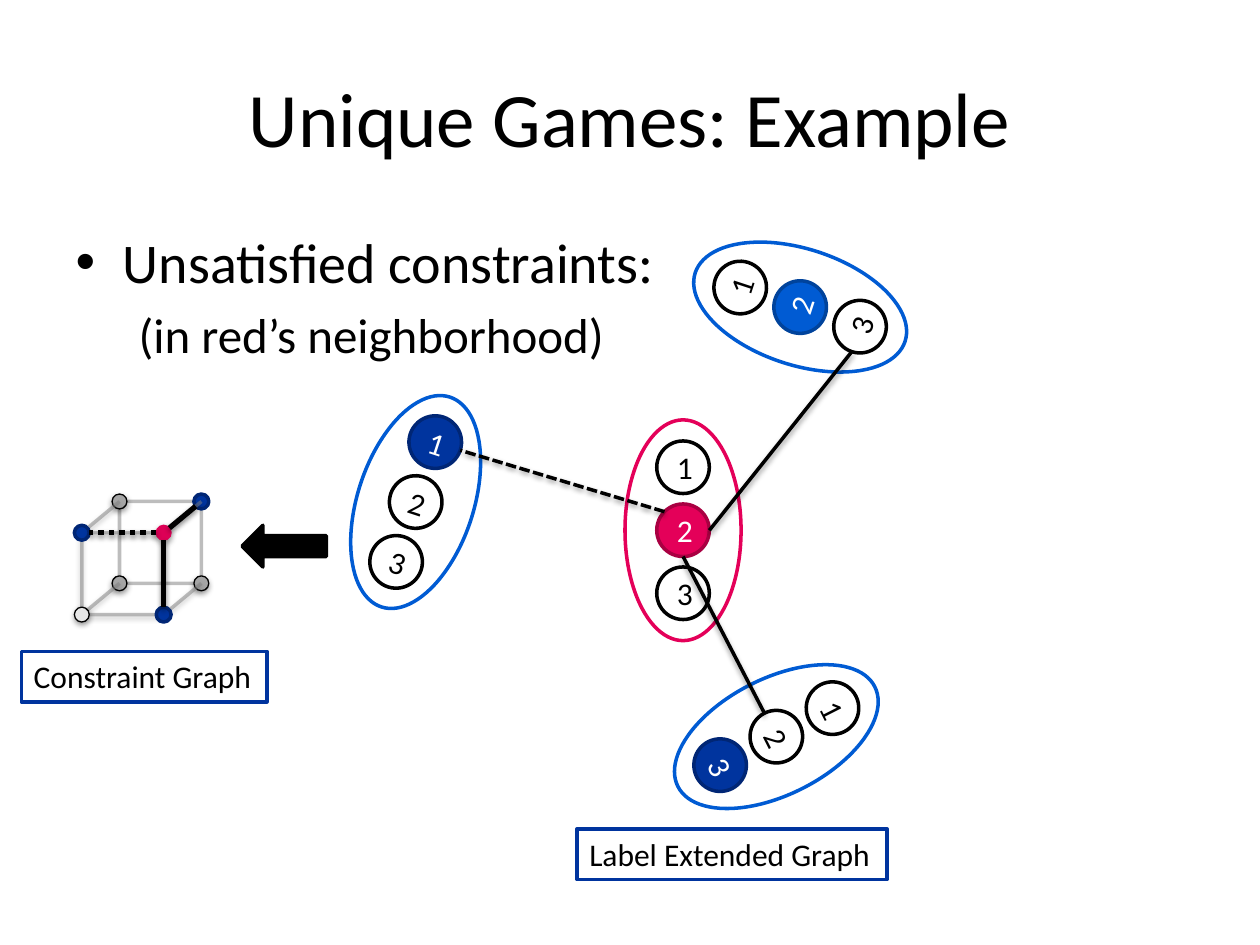
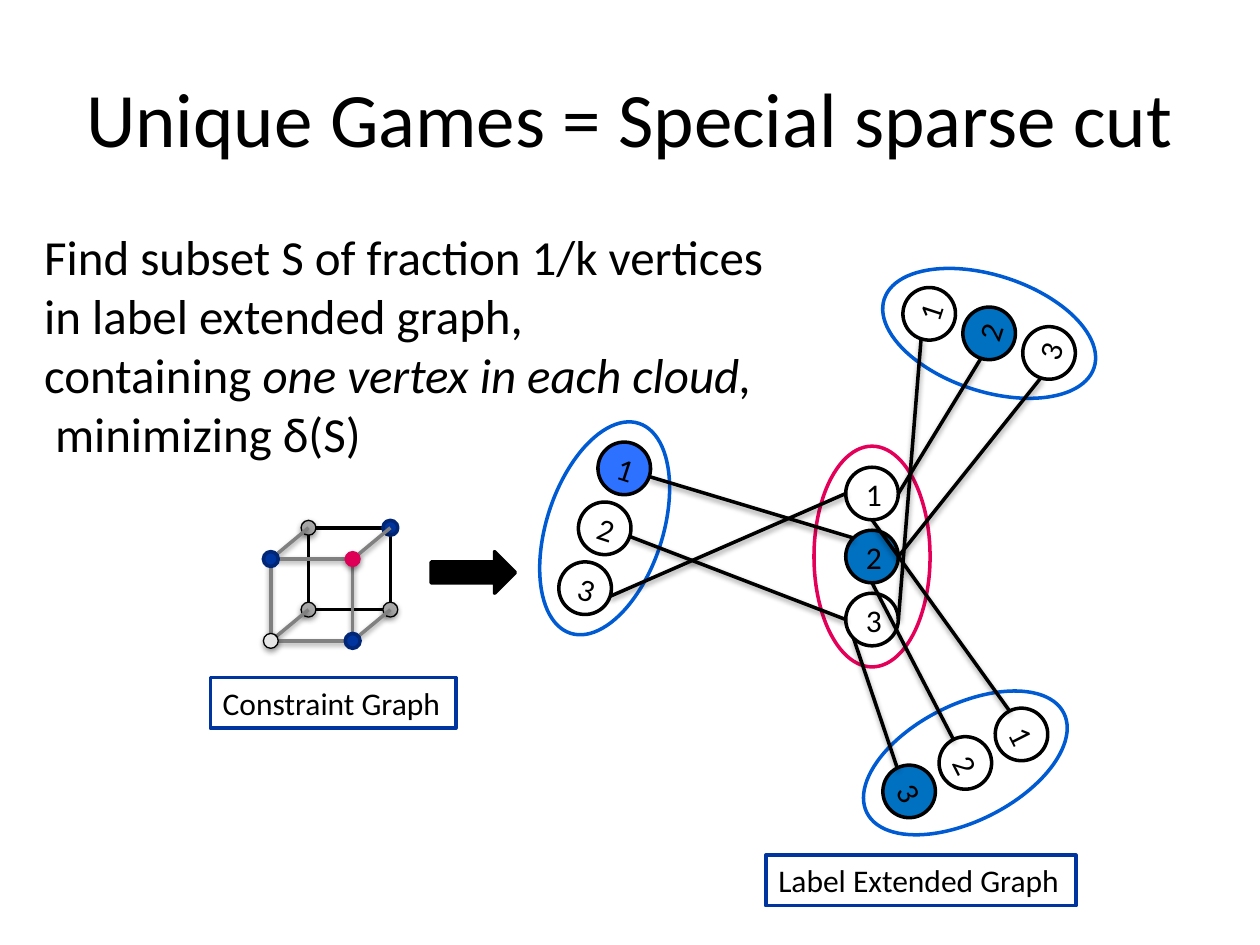
import math
from dataclasses import dataclass

import lxml.etree
import pptx
import pptx.dml.color
import pptx.enum.dml
import pptx.enum.shapes
import pptx.enum.text
import pptx.oxml
import pptx.oxml.ns
import pptx.util

Cm, Pt = pptx.util.Cm, pptx.util.Pt
Rgb = pptx.dml.color.RGBColor.from_string
qn = pptx.oxml.ns.qn
SHAPE = pptx.enum.shapes.MSO_SHAPE
DASH = pptx.enum.dml.MSO_LINE
ALIGN = pptx.enum.text.PP_ALIGN
ANCHOR = pptx.enum.text.MSO_ANCHOR
STRAIGHT = pptx.enum.shapes.MSO_CONNECTOR.STRAIGHT


@dataclass(frozen=True)
class Theme:
    font: str = "Calibri"
    black: str = "000000"
    white: str = "FFFFFF"
    grey: str = "808080"
    back_dot: str = "A6A6A6"
    pale_dot: str = "E6E6E6"
    navy: str = "00349E"
    navy_rim: str = "002675"
    blue: str = "005BD3"
    blue_rim: str = "00439C"
    red: str = "E40059"
    red_rim: str = "A90042"
    red_dot: str = "DD0056"
    cut_blue: str = "0070C0"
    bright_blue: str = "2C71FF"
    title: int = 44
    body: int = 32
    sub: int = 28
    label: int = 18


theme = Theme()


def finish(shape, line, width=2, fill=None, alpha=100, dash=None, shadow=False):
    """Set fill, outline and shadow of a shape or connector."""
    if fill:
        shape.fill.solid()
        shape.fill.fore_color.rgb = Rgb(fill)
    elif hasattr(shape, "fill"):
        shape.fill.background()
    shape.line.color.rgb = Rgb(line)
    for name, value in {"width": Pt(width), "dash_style": dash}.items():
        setattr(shape.line, name, value)
    properties = shape._element.spPr
    if alpha < 100:
        colour = properties.find(f"{qn('a:ln')}/{qn('a:solidFill')}/{qn('a:srgbClr')}")
        lxml.etree.SubElement(colour, qn("a:alpha"), val=str(alpha * 1000))
    effects = lxml.etree.SubElement(properties, qn("a:effectLst"))
    if shadow:
        effects.append(pptx.oxml.parse_xml(
            f'<a:outerShdw {pptx.oxml.ns.nsdecls("a")} blurRad="40000" dist="20000" '
            'dir="5400000" rotWithShape="0"><a:srgbClr val="000000">'
            '<a:alpha val="38000"/></a:srgbClr></a:outerShdw>'))


def write(paragraph, text, size, color=theme.black, italic=None):
    """Add a formatted run to a paragraph."""
    run = paragraph.add_run()
    run.text = text
    for name, value in {"name": theme.font, "size": Pt(size), "italic": italic}.items():
        setattr(run.font, name, value)
    run.font.color.rgb = Rgb(color)


# Geometry in centimetres
CLOUD_W, CLOUD_H = 2.34, 4.45
VERTEX, VERTEX_STEP = 1.06, 1.27
CUBE_SIDE, DOT = 1.65, 0.3
SITES = {"right": 0, "bottom": 90, "bottom left": 135, "left": 180, "top left": 225}

# Clouds: centre x, centre y, rotation, site that faces the red cloud
clouds = {
    "red": (13.77, 10.69, 0, None),
    "top": (16.13, 6.19, 288.1, "left"),
    "bottom": (15.65, 14.85, 63.1, "left"),
    "west": (8.38, 10.12, 18.1, "right"),
}

# Cube corners: x, y, fill, rim, rim width
front_x, front_y, back_x, back_y = 1.65, 10.74, 2.41, 10.11
navy_dot = (theme.navy, theme.navy_rim, 2)
back_dot = (theme.back_dot, theme.black, 0.75)
back_corners = {(0, 0): back_dot, (1, 0): navy_dot, (0, 1): back_dot, (1, 1): back_dot}
front_corners = {
    (0, 0): navy_dot,
    (1, 0): (theme.red_dot, theme.red_dot, 0.75),
    (0, 1): (theme.pale_dot, theme.black, 0.75),
    (1, 1): navy_dot,
}
red_corner = (front_x + CUBE_SIDE, front_y)
red_cube_edges = [
    ((front_x, front_y), DASH.ROUND_DOT),
    ((back_x + CUBE_SIDE, back_y), None),
    ((front_x + CUBE_SIDE, front_y + CUBE_SIDE), None),
]

captions = [("Label Extended Graph", 11.63, 16.71, 6.25),
            ("Constraint Graph", 0.43, 13.13, 4.95)]

# Chosen vertices: (cloud, label) -> fill, rim, text; edges: red label, site, cloud, label, dash
navy_choice = (theme.navy, theme.navy_rim, theme.white)
cut_choice = (theme.cut_blue, theme.black, theme.black)
plain = (theme.white, theme.black, theme.black)
games = [
    {
        "title": "Unique Games: Example", "layout": 1, "shift": (0, 0),
        "arrow": SHAPE.LEFT_ARROW, "back alpha": 25, "front alpha": 51,
        "cube edges": red_cube_edges,
        "chosen": {
            ("red", 2): (theme.red, theme.red_rim, theme.white),
            ("top", 2): (theme.blue, theme.blue_rim, theme.white),
            ("bottom", 3): navy_choice,
            ("west", 1): navy_choice,
        },
        "edges": [
            (2, "top left", "west", 1, DASH.SQUARE_DOT),
            (2, "right", "top", 3, None),
            (2, "bottom", "bottom", 2, None),
        ],
    },
    {
        "title": "Unique Games = Special sparse cut", "layout": 5, "shift": (3.81, 0.53),
        "arrow": SHAPE.RIGHT_ARROW, "back alpha": 100, "front alpha": 100,
        "cube edges": [],
        "chosen": {
            ("red", 2): cut_choice,
            ("top", 2): cut_choice,
            ("bottom", 3): cut_choice,
            ("west", 1): (theme.bright_blue, theme.black, theme.black),
        },
        "edges": [
            (2, "top left", "west", 1, None),
            (3, "left", "west", 2, None),
            (1, "left", "west", 3, None),
            (1, "right", "top", 2, None),
            (2, "right", "top", 3, None),
            (3, "right", "top", 1, None),
            (1, "bottom", "bottom", 1, None),
            (2, "bottom", "bottom", 2, None),
            (3, "bottom left", "bottom", 3, None),
        ],
    },
]

deck = pptx.Presentation()
deck.slide_width, deck.slide_height = Cm(25.4), Cm(19.05)

for game in games:
    slide = deck.slides.add_slide(deck.slide_layouts[game["layout"]])
    shapes = slide.shapes
    dx, dy = game["shift"]

    # Title
    title = shapes.title
    title.left, title.top, title.width, title.height = Cm(1.27), Cm(0.76), Cm(22.86), Cm(3.18)
    title.text_frame.vertical_anchor = ANCHOR.MIDDLE
    heading = title.text_frame.paragraphs[0]
    heading.alignment = ALIGN.CENTER
    write(heading, game["title"], theme.title)

    # List of the example
    if game["layout"] == 1:
        body = slide.placeholders[1]
        body.left, body.top, body.width, body.height = Cm(1.27), Cm(4.45), Cm(22.86), Cm(12.57)
        write(body.text_frame.paragraphs[0], "Unsatisfied constraints:", theme.body)
        remark = body.text_frame.add_paragraph()
        remark.level = 1
        lxml.etree.SubElement(remark._p.get_or_add_pPr(), qn("a:buNone"))
        write(remark, "(in red’s neighborhood)", theme.sub)

    # Constraint graph: back face, depth edges, front face
    for x, y, corners, colour, alpha in (
            (back_x, back_y, back_corners, theme.black, game["back alpha"]),
            (front_x, front_y, front_corners, theme.grey, game["front alpha"])):
        if corners is front_corners:
            for col, row in corners:
                depth = shapes.add_connector(
                    STRAIGHT,
                    Cm(front_x + col * CUBE_SIDE + dx), Cm(front_y + row * CUBE_SIDE + dy),
                    Cm(back_x + col * CUBE_SIDE + dx), Cm(back_y + row * CUBE_SIDE + dy))
                finish(depth, theme.grey, alpha=alpha, shadow=True)
        face = shapes.add_shape(SHAPE.RECTANGLE, Cm(x + dx), Cm(y + dy),
                                Cm(CUBE_SIDE), Cm(CUBE_SIDE))
        finish(face, colour, alpha=alpha, shadow=corners is front_corners)
        for (col, row), (fill, rim, width) in corners.items():
            dot = shapes.add_shape(
                SHAPE.OVAL, Cm(x + col * CUBE_SIDE - DOT / 2 + dx),
                Cm(y + row * CUBE_SIDE - DOT / 2 + dy), Cm(DOT), Cm(DOT))
            finish(dot, rim, width, fill, shadow=width < 1)

    # Clouds and their vertices
    centres = {}
    for cloud, (x, y, turn, _) in clouds.items():
        outline = shapes.add_shape(
            SHAPE.OVAL, Cm(x - CLOUD_W / 2 + dx), Cm(y - CLOUD_H / 2 + dy),
            Cm(CLOUD_W), Cm(CLOUD_H))
        outline.rotation = turn
        finish(outline, theme.red if cloud == "red" else theme.blue, fill=theme.white)
        for number in (1, 2, 3):
            reach = (number - 2) * VERTEX_STEP
            vx = x - reach * math.sin(math.radians(turn)) + dx
            vy = y + reach * math.cos(math.radians(turn)) + dy
            centres[cloud, number] = vx, vy
            fill, rim, ink = game["chosen"].get((cloud, number), plain)
            vertex = shapes.add_shape(SHAPE.OVAL, Cm(vx - VERTEX / 2), Cm(vy - VERTEX / 2),
                                      Cm(VERTEX), Cm(VERTEX))
            vertex.rotation = turn
            finish(vertex, rim, fill=fill)
            vertex.text_frame.vertical_anchor = ANCHOR.MIDDLE
            digit = vertex.text_frame.paragraphs[0]
            digit.alignment = ALIGN.CENTER
            write(digit, str(number), theme.label, ink)

    # Constraint edges, from rim to rim
    for red_number, red_site, cloud, number, dash in game["edges"]:
        ends = []
        for key, site in (("red", red_number), red_site), ((cloud, number), clouds[cloud][3]):
            angle = math.radians(SITES[site] + clouds[key[0]][2])
            vx, vy = centres[key]
            ends += [Cm(vx + VERTEX / 2 * math.cos(angle)), Cm(vy + VERTEX / 2 * math.sin(angle))]
        edge = shapes.add_connector(STRAIGHT, *ends)
        finish(edge, theme.black, dash=dash, shadow=True)

    # Captions and the arrow between the graphs
    for text, x, y, width in captions:
        caption = shapes.add_textbox(Cm(x + dx), Cm(y + dy), Cm(width), Cm(1.02))
        finish(caption, theme.navy, fill=theme.white)
        caption.text_frame.word_wrap = False
        write(caption.text_frame.paragraphs[0], text, theme.label)
    arrow = shapes.add_shape(game["arrow"], Cm(4.88 + dx), Cm(10.59 + dy), Cm(1.7), Cm(0.84))
    finish(arrow, theme.black, fill=theme.black)

    # Highlighted cube edges at the red corner
    for (x, y), dash in game["cube edges"]:
        start_x, start_y = red_corner
        length = math.hypot(x - start_x, y - start_y)
        trim_x, trim_y = (x - start_x) / length * DOT / 2, (y - start_y) / length * DOT / 2
        strong = shapes.add_connector(
            STRAIGHT, Cm(start_x + trim_x + dx), Cm(start_y + trim_y + dy),
            Cm(x - trim_x + dx), Cm(y - trim_y + dy))
        finish(strong, theme.black, 3, dash=dash, shadow=True)

    # Statement of the sparse cut problem
    if game["layout"] == 5:
        statement = shapes.add_textbox(Cm(0.64), Cm(4.45), Cm(15.65), Cm(5.05))
        frame = statement.text_frame
        frame.word_wrap = False
        write(frame.paragraphs[0], "Find subset S of fraction 1/k vertices", theme.sub)
        write(frame.add_paragraph(), "in label extended graph,", theme.sub)
        condition = frame.add_paragraph()
        write(condition, "containing ", theme.sub)
        write(condition, "one vertex in each cloud,", theme.sub, italic=True)
        goal = frame.add_paragraph()
        goal._p.get_or_add_pPr().set("marL", str(Cm(0.22)))
        write(goal, "minimizing δ(S)", theme.sub)

deck.save("out.pptx")
